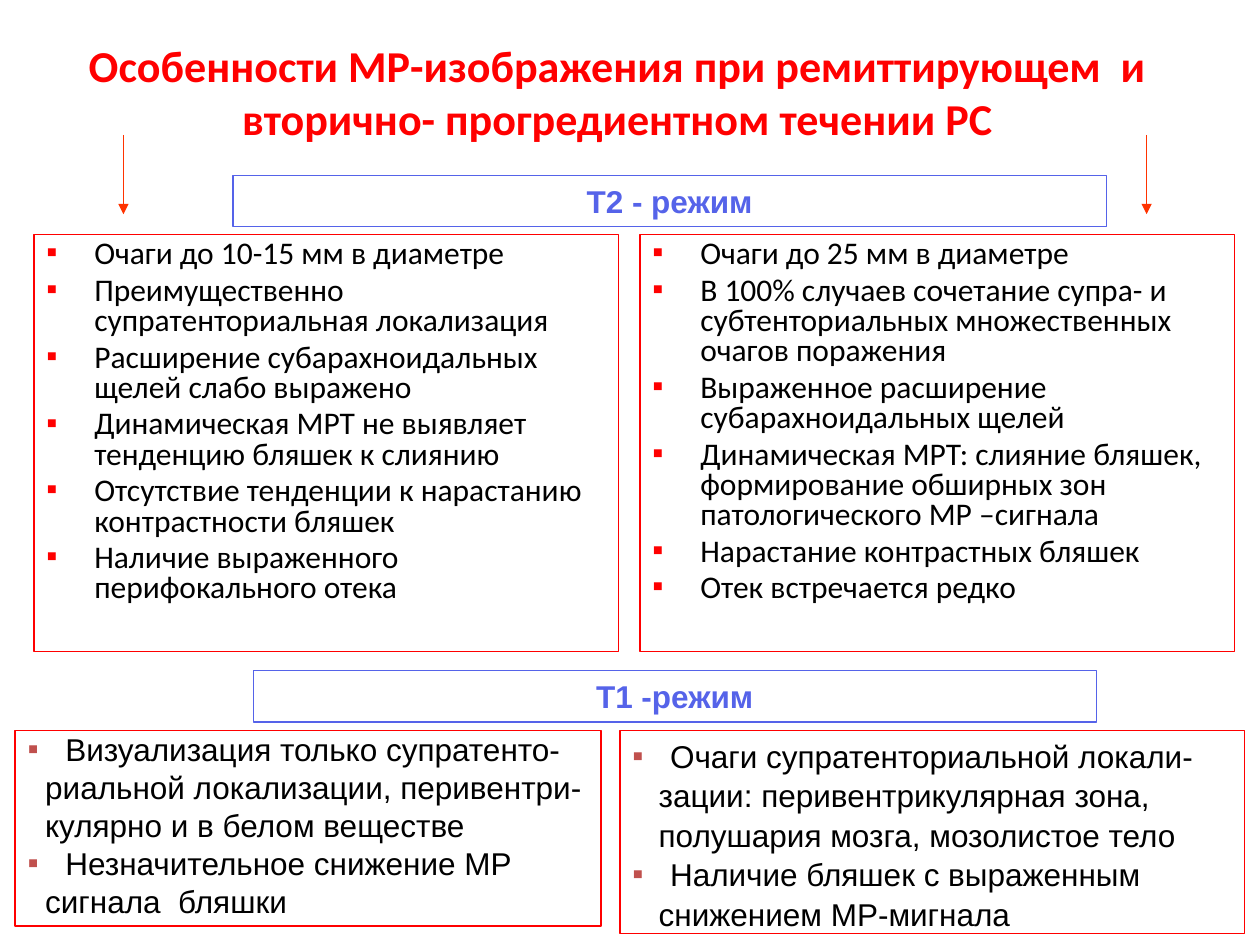
import dataclasses

import pptx
import pptx.dml.color
import pptx.enum.shapes
import pptx.enum.text
import pptx.oxml
import pptx.oxml.ns
import pptx.util

Inches = pptx.util.Inches
Pt = pptx.util.Pt
Align = pptx.enum.text.PP_ALIGN
Anchor = pptx.enum.text.MSO_ANCHOR


@dataclasses.dataclass(frozen=True)
class Theme:
    red: str = "FF0000"
    arrow: str = "FF3300"
    blue: str = "5563E9"
    marker: str = "C0504D"
    black: str = "000000"
    heading_font: str = "Calibri"
    label_font: str = "Arial"
    title_size: float = 25.2
    text_size: float = 18
    line_width: float = 0.75


def rgb(value):
    return pptx.dml.color.RGBColor.from_string(value)


def apply_format(target, values):
    for attribute, value in values.items():
        setattr(target, attribute, value)


class SlideBuilder:
    def __init__(self, slide, theme):
        self.slide = slide
        self.theme = theme

    def add_text(self, paragraph, text, font, size, color, bold=False):
        run = paragraph.add_run()
        run.text = text
        apply_format(run.font, {"name": font, "size": Pt(size), "bold": bold})
        run.font.color.rgb = rgb(color)

    def place(self, shape, box):
        apply_format(shape, dict(zip(("left", "top", "width", "height"), map(Inches, box))))

    def title(self, text, box):
        heading = self.slide.shapes.title
        self.place(heading, box)
        frame = heading.text_frame
        apply_format(frame, {
            "word_wrap": True,
            "auto_size": pptx.enum.text.MSO_AUTO_SIZE.NONE,
            "vertical_anchor": Anchor.MIDDLE,
        })
        paragraph = frame.paragraphs[0]
        paragraph.alignment = Align.CENTER
        self.add_text(paragraph, text, self.theme.heading_font,
                      self.theme.title_size, self.theme.red, True)

    def panel(self, box, color, anchor=Anchor.TOP):
        panel = self.slide.shapes.add_shape(
            pptx.enum.shapes.MSO_SHAPE.RECTANGLE, *map(Inches, box))
        panel.shadow.inherit = False
        panel.fill.background()
        panel.line.color.rgb = rgb(color)
        panel.line.width = Pt(self.theme.line_width)
        apply_format(panel.text_frame, {"word_wrap": True, "vertical_anchor": anchor})
        return panel.text_frame

    def mode_label(self, text, box):
        frame = self.panel(box, self.theme.blue, Anchor.MIDDLE)
        paragraph = frame.paragraphs[0]
        paragraph.alignment = Align.CENTER
        self.add_text(paragraph, text, self.theme.label_font,
                      self.theme.text_size, self.theme.blue, True)

    def set_indent(self, paragraph, margin, bullet_color=None):
        properties = paragraph._p.get_or_add_pPr()
        properties.set("marL", str(Inches(margin)))
        properties.set("indent", str(Inches(-margin) if bullet_color else 0))
        if bullet_color:
            namespace = pptx.oxml.ns.nsdecls("a")
            for markup in (
                f'<a:buClr {namespace}><a:srgbClr val="{bullet_color}"/></a:buClr>',
                f'<a:buFont {namespace} typeface="Arial"/>',
                f'<a:buChar {namespace} char="▪"/>',
            ):
                properties.append(pptx.oxml.parse_xml(markup))

    def findings(self, box, items, font, bullet_color, margin, hang, spacing, gap):
        frame = self.panel(box, self.theme.red)
        lines = [(line, position == 0) for item in items
                 for position, line in enumerate(item.split("\n"))]
        for index, (line, starts_item) in enumerate(lines):
            paragraph = frame.add_paragraph() if index else frame.paragraphs[0]
            if starts_item:
                self.set_indent(paragraph, margin, bullet_color)
            else:
                self.set_indent(paragraph, hang)
            values = {"alignment": Align.LEFT, "line_spacing": spacing}
            if index:
                values["space_before"] = Pt(gap)
            apply_format(paragraph, values)
            self.add_text(paragraph, line, font, self.theme.text_size, self.theme.black)

    def arrow(self, x, top, bottom):
        arrow = self.slide.shapes.add_connector(
            pptx.enum.shapes.MSO_CONNECTOR.STRAIGHT,
            Inches(x), Inches(top), Inches(x), Inches(bottom))
        arrow.line.color.rgb = rgb(self.theme.arrow)
        arrow.line.width = Pt(self.theme.line_width)
        namespace = pptx.oxml.ns.nsdecls("a")
        outline = arrow._element.spPr.find(pptx.oxml.ns.qn("a:ln"))
        outline.append(pptx.oxml.parse_xml(f'<a:tailEnd {namespace} type="triangle"/>'))
        arrow._element.spPr.append(pptx.oxml.parse_xml(f"<a:effectLst {namespace}/>"))


T2_REMITTING = [
    "Очаги до 10-15 мм в диаметре",
    "Преимущественно супратенториальная локализация",
    "Расширение субарахноидальных щелей слабо выражено",
    "Динамическая МРТ не выявляет тенденцию бляшек к слиянию",
    "Отсутствие тенденции к нарастанию контрастности бляшек",
    "Наличие выраженного перифокального отека",
]
T2_PROGRESSIVE = [
    "Очаги до 25 мм в диаметре",
    "В 100% случаев сочетание супра- и субтенториальных множественных очагов поражения",
    "Выраженное расширение субарахноидальных щелей",
    "Динамическая МРТ: слияние бляшек, формирование обширных зон патологического МР –сигнала",
    "Нарастание контрастных бляшек",
    "Отек встречается редко",
]
T1_REMITTING = [
    "Визуализация только супратенто-\nриальной локализации, перивентри-\nкулярно и в белом веществе",
    "Незначительное снижение МР\nсигнала  бляшки",
]
T1_PROGRESSIVE = [
    "Очаги супратенториальной локали-\nзации: перивентрикулярная зона,\nполушария мозга, мозолистое тело",
    "Наличие бляшек с выраженным\nснижением МР-мигнала",
]


def main():
    theme = Theme()
    presentation = pptx.Presentation()
    apply_format(presentation, {"slide_width": Inches(10), "slide_height": Inches(7.5)})
    slide = presentation.slides.add_slide(presentation.slide_layouts[5])
    builder = SlideBuilder(slide, theme)

    builder.title("Особенности МР-изображения при ремиттирующем  и "
                  "вторично- прогредиентном течении РС", (0, 0.3, 9.8, 0.85))

    t2_style = {"font": theme.heading_font, "bullet_color": theme.red,
                "margin": 0.38, "hang": 0.38, "spacing": 0.8, "gap": 3.6}
    builder.findings((0.27, 1.86, 4.64, 3.31), T2_REMITTING, **t2_style)
    builder.findings((5.08, 1.86, 4.72, 3.31), T2_PROGRESSIVE, **t2_style)
    builder.mode_label("Т2 - режим", (1.85, 1.39, 6.93, 0.41))

    t1_style = {"font": theme.label_font, "bullet_color": theme.marker, "margin": 0.3}
    builder.findings((0.12, 5.8, 4.65, 1.55), T1_REMITTING,
                     hang=0.14, spacing=0.8, gap=4.4, **t1_style)
    builder.mode_label("Т1 -режим", (2.01, 5.32, 6.69, 0.41))
    builder.findings((4.92, 5.8, 4.96, 1.61), T1_PROGRESSIVE,
                     hang=0.21, spacing=1.0, gap=0.9, **t1_style)

    for x in (0.98, 9.1):
        builder.arrow(x, 1.07, 1.7)

    presentation.save("out.pptx")


if __name__ == "__main__":
    main()
